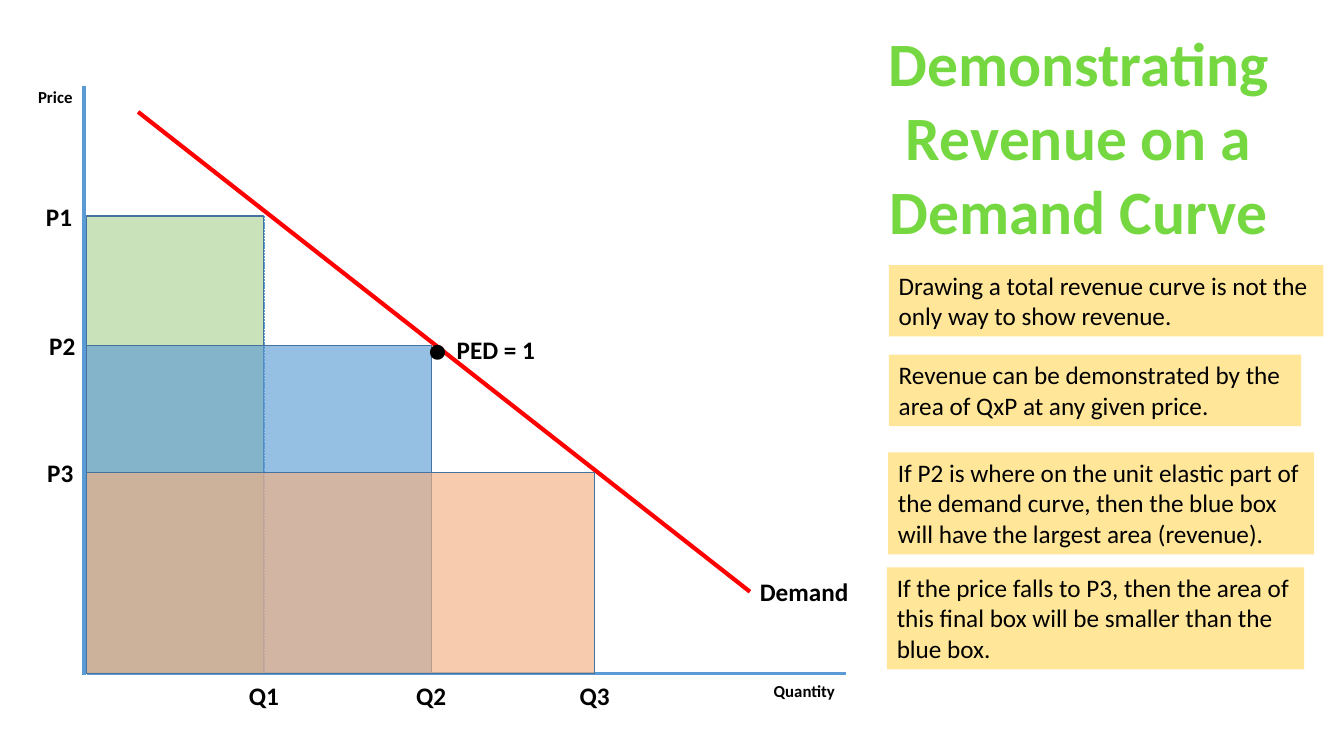
from lxml.etree import SubElement
from pptx import Presentation
from pptx.dml.color import RGBColor
from pptx.enum.dml import MSO_LINE
from pptx.enum.shapes import MSO_CONNECTOR, MSO_SHAPE
from pptx.enum.text import MSO_AUTO_SIZE, PP_ALIGN
from pptx.oxml.ns import qn
from pptx.util import Cm, Pt

THEME = {
    "font": "Calibri",
    "title": Pt(44), "text": Pt(18), "small": Pt(12), "dot": Pt(72),
    "ink": RGBColor.from_string("000000"),
    "heading": RGBColor.from_string("75D840"),
    "axis": RGBColor.from_string("5B9BD5"),
    "demand": RGBColor.from_string("FF0000"),
    "outline": RGBColor.from_string("43739E"),
    "note": RGBColor.from_string("FFE699"),
    "green": RGBColor.from_string("A9D18E"),
    "blue": RGBColor.from_string("5B9BD5"),
    "orange": RGBColor.from_string("F4B183"),
}

deck = Presentation()
deck.slide_width, deck.slide_height = Cm(33.87), Cm(19.05)
page = deck.slides.add_slide(deck.slide_layouts[6])


def add_text(place, text, size="text", color="ink", bold=True, wrap=False):
    box = page.shapes.add_textbox(*map(Cm, place))
    frame = box.text_frame
    frame.word_wrap = wrap
    frame.auto_size = MSO_AUTO_SIZE.SHAPE_TO_FIT_TEXT
    frame.paragraphs[0].text = text.replace("\n", "\v")
    style = {"name": THEME["font"], "size": THEME[size], "bold": bold}
    for span in frame.paragraphs[0].runs:
        for name, value in style.items():
            setattr(span.font, name, value)
        span.font.color.rgb = THEME[color]
    return box


def add_line(start, end, color, width, dash=None):
    line = page.shapes.add_connector(
        MSO_CONNECTOR.STRAIGHT, *map(Cm, (*start, *end)))
    style = {"width": Pt(width), "dash_style": dash}
    for name, value in style.items():
        setattr(line.line, name, value)
    line.line.color.rgb = THEME[color]
    SubElement(line._element.spPr, qn("a:effectLst"))
    return line


# Axes
origin_x, origin_y = 2.18, 16.97
add_line((2.11, 2.16), (2.11, 17.02), "axis", 2.75)
add_line((origin_x, origin_y), (21.31, origin_y), "axis", 2.75)
add_text((0.71, 2.06, 1.4, 0.76), "Price", "small")
add_text((19.25, 17.02, 2.08, 0.76), "Quantity", "small")

# Demand curve, ending at its label
demand_label = add_text((18.9, 14.4, 2.77, 1.02), "Demand")
demand_curve = add_line((3.48, 2.82), (18.9, 14.91), "demand", 3)
demand_curve.end_connect(demand_label, 1)

# Price levels: quantity, price, colour, opacity in percent, label left
levels = [
    (6.65, 5.44, "green", 61, 0.91),
    (10.87, 8.71, "blue", 64, 0.99),
    (14.99, 11.91, "orange", 66, 0.94),
]

# Dashed guides
for quantity, price, *_ in levels:
    corner = (quantity, price)
    for start, end in (((origin_x, price), corner),
                       (corner, (quantity, origin_y))):
        add_line(start, end, "axis", 0.5, MSO_LINE.SQUARE_DOT)

# Revenue areas with their price and quantity labels
for number, (quantity, price, color, opacity, left) in enumerate(levels, 1):
    area = page.shapes.add_shape(
        MSO_SHAPE.RECTANGLE, Cm(origin_x), Cm(price),
        Cm(quantity - origin_x), Cm(origin_y - price))
    area.shadow.inherit = False
    area.fill.solid()
    area.fill.fore_color.rgb = THEME[color]
    tint = area._element.spPr.find(qn("a:solidFill"))[0]
    SubElement(tint, qn("a:alpha"), val=str(opacity * 1000))
    area.line.color.rgb = THEME["outline"]
    area.line.width = Pt(1)
    add_text((left, price - 0.5, 1.17, 1.02), f"P{number}")
    add_text((quantity - 0.63, 17.02, 1.27, 1.02), f"Q{number}")

# Title
title = add_text((21.31, 0.51, 11.76, 5.89),
                 "Demonstrating\nRevenue on a\nDemand Curve",
                 "title", "heading", wrap=True)
title.text_frame.paragraphs[0].alignment = PP_ALIGN.CENTER

# Unit elastic point: a large full stop followed by its label
point = add_text((10.44, 6.4, 3.35, 3.33), ".", "dot")
span = point.text_frame.paragraphs[0].add_run()
span.text = " PED = 1"
for name, value in {"name": THEME["font"], "size": THEME["text"],
                    "bold": True}.items():
    setattr(span.font, name, value)
span.font.color.rgb = THEME["ink"]

# Notes
notes = [
    ((22.4, 6.68, 10.95, 1.8),
     "Drawing a total revenue curve is not the\nonly way to show revenue."),
    ((22.4, 8.94, 10.39, 1.8),
     "Revenue can be demonstrated by the\narea of QxP at any given price."),
    ((22.38, 11.4, 10.74, 2.57),
     "If P2 is where on the unit elastic part of\n"
     "the demand curve, then the blue box\n"
     "will have the largest area (revenue)."),
    ((22.35, 14.3, 10.52, 2.57),
     "If the price falls to P3, then the area of\n"
     "this final box will be smaller than the\nblue box."),
]
for place, text in notes:
    note = add_text(place, text, bold=False)
    note.fill.solid()
    note.fill.fore_color.rgb = THEME["note"]

deck.save("out.pptx")
